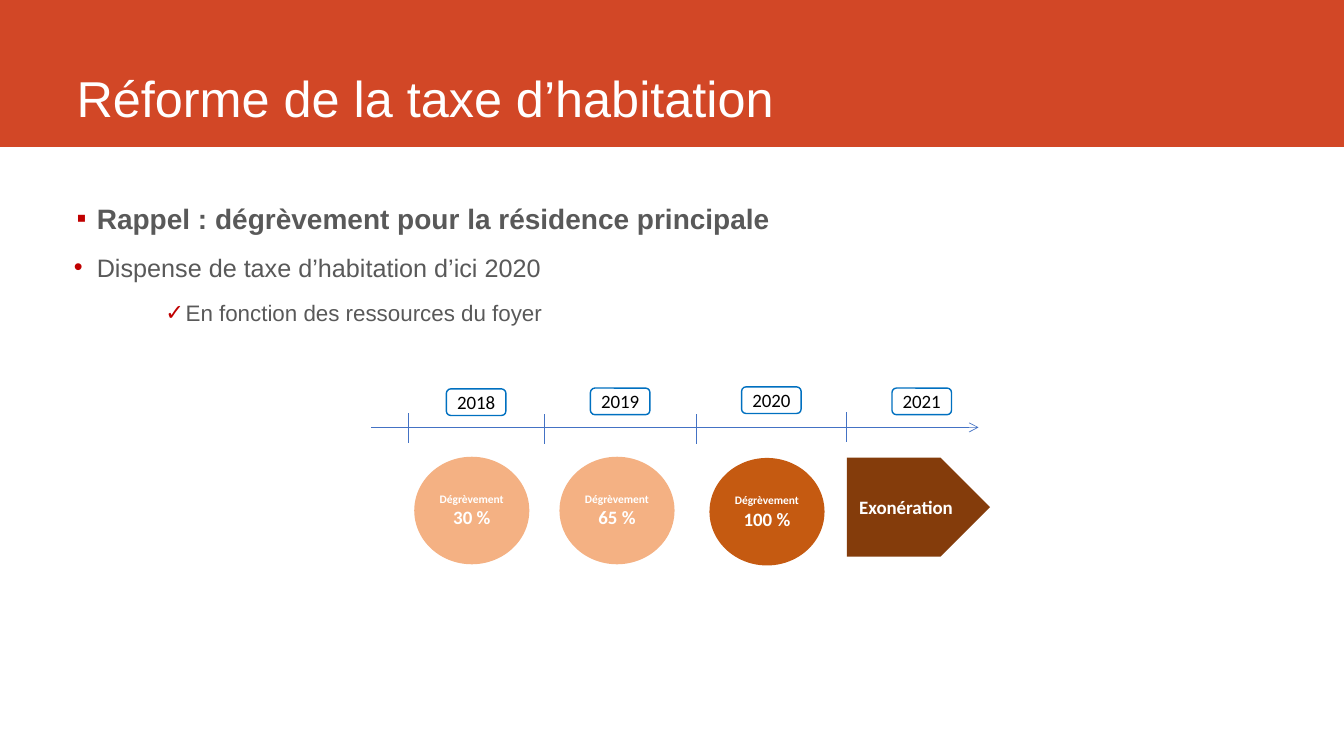
from lxml import etree
from pptx import Presentation
from pptx import util as u
from pptx.dml.color import RGBColor
from pptx.enum import shapes, text
from pptx.oxml.ns import qn

Cm, Pt = u.Cm, u.Pt
MSO, ALIGN, ANCHOR = shapes.MSO_SHAPE, text.PP_ALIGN, text.MSO_ANCHOR

# Colours
BANNER = RGBColor(0xD2, 0x47, 0x26)
WHITE = RGBColor(0xFF, 0xFF, 0xFF)
BLACK = RGBColor(0, 0, 0)
GREY = RGBColor(0x59, 0x59, 0x59)
BULLET = RGBColor(0xC0, 0, 0)
AXIS = RGBColor(0x44, 0x72, 0xC4)
BORDER = RGBColor(0, 0x70, 0xC0)
PEACH = RGBColor(0xF4, 0xB1, 0x83)
ORANGE = RGBColor(0xC5, 0x5A, 0x11)
BROWN = RGBColor(0x84, 0x3C, 0x0B)

# Content (positions in cm)
TITLE = "Réforme de la taxe d’habitation"
# text, bullet, size, bold, indent, hanging
POINTS = [
    ("Rappel : dégrèvement pour la résidence principale", "▪", 20, True, 0.76, 0.51),
    ("Dispense de taxe d’habitation d’ici 2020", "•", 18, False, 0.76, 0.58),
    ("En fonction des ressources du foyer", "✓", 16, False, 3, 0.51),
]
# year, badge left, badge top, tick x, tick top
YEARS = [
    ("2018", 11.25, 9.8, 10.29, 10.41),
    ("2019", 14.88, 9.78, 13.72, 10.44),
    ("2020", 18.69, 9.75, 17.55, 10.44),
    ("2021", 22.48, 9.78, 21.34, 10.39),
]
# rate, left, top, fill
RELIEFS = [
    ("30 %", 10.44, 11.51, PEACH),
    ("65 %", 14.1, 11.51, PEACH),
    ("100 %", 17.88, 11.54, ORANGE),
]
AXIS_LEFT, AXIS_RIGHT, AXIS_Y, TICK = 9.35, 24.66, 10.77, 0.76

prs = Presentation()
prs.slide_width, prs.slide_height = Cm(33.87), Cm(19.05)
s = prs.slides.add_slide(prs.slide_layouts[6])


def style(p, size, color, font, bold=False):
    for r in p.runs:
        r.font.size, r.font.name, r.font.bold = Pt(size), font, bold
        r.font.color.rgb = color


def add_box(kind, left, top, width, height, fill, lines=(), color=WHITE,
            bold=True, border=None):
    """Filled shape with centred lines of (text, size)."""
    sp = s.shapes.add_shape(kind, Cm(left), Cm(top), Cm(width), Cm(height))
    sp.shadow.inherit = False
    sp.fill.solid()
    sp.fill.fore_color.rgb = fill
    if border is None:
        sp.line.fill.background()
    else:
        sp.line.color.rgb, sp.line.width = border, Pt(1)
    tf = sp.text_frame
    tf.word_wrap, tf.vertical_anchor = False, ANCHOR.MIDDLE
    tf.margin_left = tf.margin_right = Cm(0.18)
    tf.margin_top = tf.margin_bottom = Cm(0.1)
    tf.text = "\n".join(line for line, size in lines)
    for p, (line, size) in zip(tf.paragraphs, lines):
        p.alignment = ALIGN.CENTER
        style(p, size, color, "Calibri", bold)
    return sp


def add_line(x1, y1, x2, y2):
    c = s.shapes.add_connector(shapes.MSO_CONNECTOR.STRAIGHT,
                               Cm(x1), Cm(y1), Cm(x2), Cm(y2))
    c.line.color.rgb, c.line.width = AXIS, Pt(0.5)
    etree.SubElement(c._element.spPr, qn("a:effectLst"))
    return c


def add_text(left, top, width, height):
    tf = s.shapes.add_textbox(Cm(left), Cm(top), Cm(width), Cm(height)).text_frame
    tf.word_wrap = True
    return tf


def add_bullet(p, char, indent, hanging):
    pPr = p._p.get_or_add_pPr()
    pPr.set("marL", str(Cm(indent)))
    pPr.set("indent", str(-Cm(hanging)))
    color = etree.SubElement(pPr, qn("a:buClr"))
    etree.SubElement(color, qn("a:srgbClr"), val=str(BULLET))
    etree.SubElement(pPr, qn("a:buFont"), typeface="Arial")
    etree.SubElement(pPr, qn("a:buChar"), char=char)


# Banner and title
add_box(MSO.RECTANGLE, 0, 0, 33.87, 3.7, BANNER)
tf = add_text(1.68, 0, 29.87, 3.35)
tf.vertical_anchor = ANCHOR.BOTTOM
tf.text = TITLE
style(tf.paragraphs[0], 36, WHITE, "Arial")

# Bullet points
tf = add_text(1.68, 5.08, 29.87, 12.09)
tf.margin_left = tf.margin_right = tf.margin_top = tf.margin_bottom = 0
tf.text = "\n".join(point[0] for point in POINTS)
for p, (_, char, size, bold, indent, hanging) in zip(tf.paragraphs, POINTS):
    p.space_before = p.space_after = Pt(6)
    add_bullet(p, char, indent, hanging)
    style(p, size, GREY, "Arial", bold)

# Time axis
axis = add_line(AXIS_LEFT, AXIS_Y, AXIS_RIGHT, AXIS_Y)
etree.SubElement(axis.line._get_or_add_ln(), qn("a:tailEnd"), type="arrow")

# Ticks and year badges
for year, left, top, tick_x, tick_top in YEARS:
    add_line(tick_x, tick_top, tick_x, tick_top + TICK)
    add_box(MSO.ROUNDED_RECTANGLE, left, top, 1.5, 0.67, WHITE, [(year, 13.5)],
            BLACK, False, BORDER)

# Relief steps and final exemption
for rate, left, top, fill in RELIEFS:
    add_box(MSO.OVAL, left, top, 2.9, 2.71, fill,
            [("Dégrèvement", 8.2), (rate, 13.5)])
add_box(MSO.PENTAGON, 21.34, 11.53, 3.61, 2.5, BROWN, [("Exonération", 13.5)])

prs.save("out.pptx")
